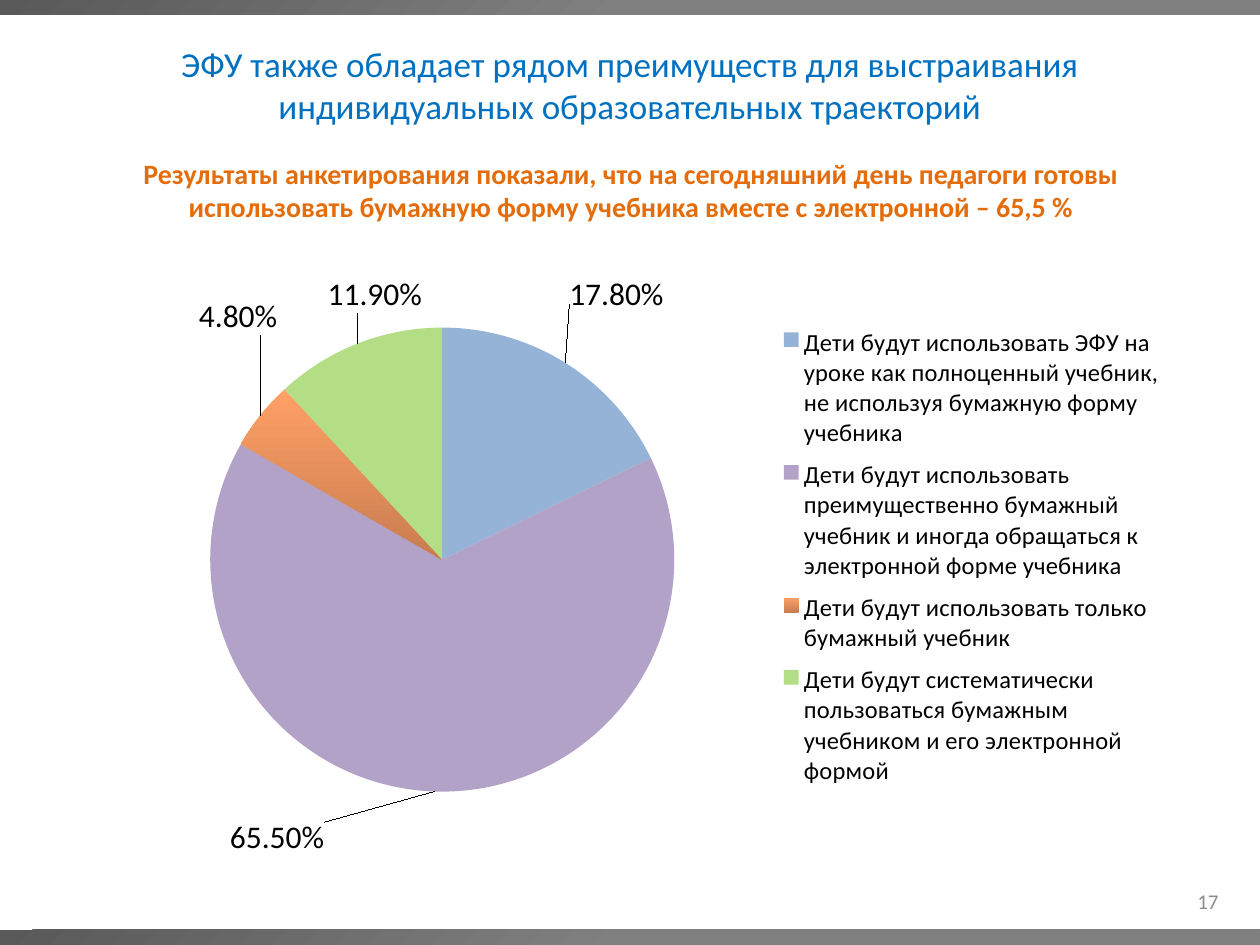
from lxml import etree
from pptx import Presentation
from pptx import util as u
from pptx.chart import data as chart_data
from pptx.dml import color
from pptx.enum import chart as charts, shapes, text
from pptx.oxml import ns

PX = 914400 // 126
FONT = "Calibri"
COLORS = {
    "title": "0070C0", "accent": "E46C0A", "number": "8C8C8C", "text": "000000",
    "band_dark": "595959", "band": "808080",
    "blue": "95B3D7", "purple": "B3A2C7", "green": "B4DE86",
    "orange_light": "FFA066", "orange_dark": "C87D50",
}
TITLE = ("ЭФУ также обладает рядом преимуществ для выстраивания "
         "индивидуальных образовательных траекторий")
FINDING = [
    "Результаты анкетирования показали, что на сегодняшний день педагоги готовы",
    "использовать бумажную форму учебника вместе с электронной – 65,5 %",
]
ANSWERS = [
    ("Дети будут использовать ЭФУ на уроке как полноценный учебник, "
     "не используя бумажную форму учебника", 0.178, ["blue"], (0, -0.09)),
    ("Дети будут использовать преимущественно бумажный учебник и иногда "
     "обращаться к электронной форме учебника", 0.655, ["purple"], (-0.14, 0.04)),
    ("Дети будут использовать только бумажный учебник", 0.048,
     ["orange_light", "orange_dark"], (0.02, -0.13)),
    ("Дети будут систематически пользоваться бумажным учебником "
     "и его электронной формой", 0.119, ["green"], (0.06, -0.04)),
]


def px(*lengths):
    """Turn pixel lengths into EMU."""
    return [u.Emu(length * PX) for length in lengths]


def rgb(name):
    """Look up a named colour."""
    return color.RGBColor.from_string(COLORS[name])


def style_font(font, size, name, bold=False):
    """Set face, size, weight and colour of a font."""
    font.name, font.size, font.bold = FONT, u.Pt(size), bold
    font.color.rgb = rgb(name)


def paint(fill, names, angle):
    """Fill with one colour, or with a linear gradient of two."""
    if len(names) == 1:
        fill.solid()
        fill.fore_color.rgb = rgb(names[0])
        return
    fill.gradient()
    fill.gradient_angle = angle
    for stop, name, position in zip(fill.gradient_stops, names, (0, 1)):
        stop.color.rgb = rgb(name)
        stop.position = position


def add_band(page, top):
    """Draw a grey gradient band across the page."""
    band = page.shapes.add_shape(shapes.MSO_SHAPE.RECTANGLE, *px(0, top, 1260, 15))
    band.shadow.inherit = False
    band.line.fill.background()
    paint(band.fill, ["band_dark", "band"], 315)
    band.fill.gradient_stops[1].position = 0.5


def write(box, lines, size, name, align, anchor, bold=False):
    """Write one paragraph per line into a box."""
    frame = box.text_frame
    frame.word_wrap = True
    frame.auto_size = text.MSO_AUTO_SIZE.NONE
    frame.vertical_anchor = anchor
    for index, line in enumerate(lines):
        para = frame.add_paragraph() if index else frame.paragraphs[0]
        para.alignment = align
        span = para.add_run()
        span.text = line
        style_font(span.font, size, name, bold)


def add_text(page, place, *style, **options):
    """Add a text box and write into it."""
    write(page.shapes.add_textbox(*px(*place)), *style, **options)


def manual_layout(x, y, width=None, height=None, inner=False):
    """Make a chart layout element from fractions of the chart."""
    layout = etree.Element(ns.qn("c:layout"))
    manual = etree.SubElement(layout, ns.qn("c:manualLayout"))
    values = [("layoutTarget", "inner")] if inner else []
    if width:
        values += [("xMode", "edge"), ("yMode", "edge")]
    values += [("x", x), ("y", y)]
    if width:
        values += [("w", width), ("h", height)]
    for tag, value in values:
        etree.SubElement(manual, ns.qn(f"c:{tag}")).set("val", str(value))
    return layout


def place_part(part, layout, position):
    """Put a layout into a chart part, replacing any present one."""
    for old in part.findall(ns.qn("c:layout")):
        part.remove(old)
    part.insert(position, layout)


def add_pie(page, place):
    """Add the survey pie with moved labels and a legend."""
    answers = chart_data.CategoryChartData(number_format="0.00%")
    answers.categories = [answer[0] for answer in ANSWERS]
    answers.add_series("Series 1", [answer[1] for answer in ANSWERS])
    pie = page.shapes.add_chart(charts.XL_CHART_TYPE.PIE, *px(*place), answers).chart
    pie.has_title = False
    style_font(pie.font, 18, "text")
    pie.has_legend = True
    pie.legend.position = charts.XL_LEGEND_POSITION.RIGHT
    pie.legend.include_in_layout = False
    style_font(pie.legend.font, 14, "text")
    place_part(pie.legend._element, manual_layout(0.63, 0.07, 0.35, 0.83), 1)
    plot_area = pie._chartSpace.chart.plotArea
    place_part(plot_area, manual_layout(0.126, 0.09, 0.414, 0.8, True), 0)

    series = pie.plots[0].series[0]
    labels = series.data_labels
    labels.show_value = True
    labels.number_format, labels.number_format_is_linked = "0.00%", False
    style_font(labels.font, 18, "text")
    for index, (_, _, names, shift) in enumerate(ANSWERS):
        point = series.points[index]
        paint(point.format.fill, names, 270)
        point.data_label.position = charts.XL_LABEL_POSITION.OUTSIDE_END
        style_font(point.data_label.font, 18, "text")
        label = labels._element.findall(ns.qn("c:dLbl"))[index]
        place_part(label, manual_layout(*shift), 1)


def main():
    """Build the survey slide."""
    deck = Presentation()
    deck.slide_width, deck.slide_height = px(1260, 945)
    page = deck.slides.add_slide(deck.slide_layouts[5])
    for top in (0, 930):
        add_band(page, top)
    title = page.shapes.title
    title.left, title.top, title.width, title.height = px(63, 6, 1134, 158)
    center, middle = text.PP_ALIGN.CENTER, text.MSO_ANCHOR.MIDDLE
    write(title, [TITLE], 20, "title", center, middle)
    add_text(page, (33, 150, 1196, 129), FINDING, 16, "accent", center,
             text.MSO_ANCHOR.TOP, bold=True)
    add_pie(page, (69, 275, 1121, 581))
    add_text(page, (937, 876, 294, 50), ["17"], 12, "number",
             text.PP_ALIGN.RIGHT, middle)
    deck.save("out.pptx")


if __name__ == "__main__":
    main()
